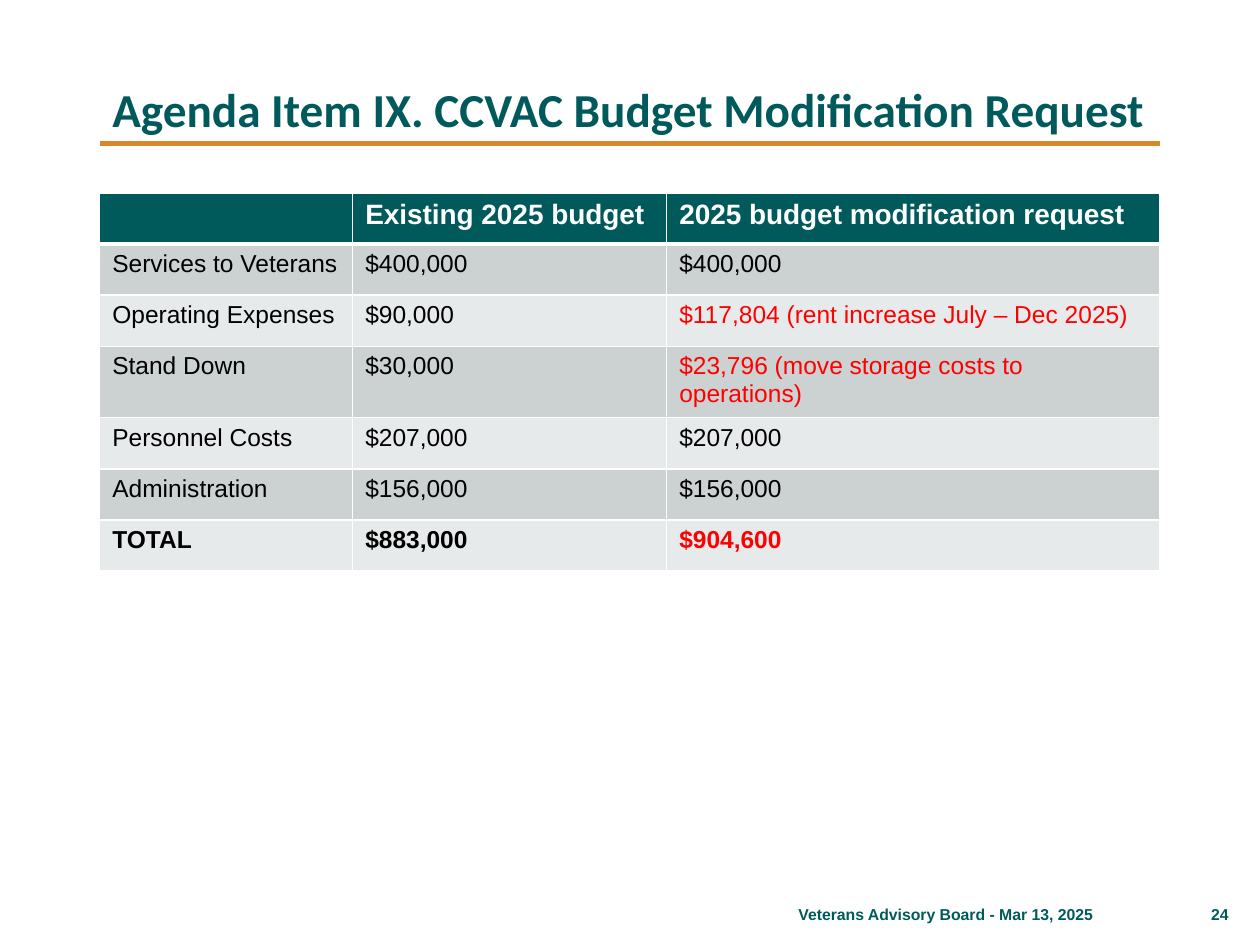
from lxml import etree
from pptx import Presentation
from pptx.dml.color import RGBColor
from pptx.enum.shapes import MSO_CONNECTOR
from pptx.enum.text import MSO_ANCHOR, MSO_AUTO_SIZE, PP_ALIGN
from pptx.oxml.ns import qn
from pptx.util import Cm, Pt

STRAIGHT = MSO_CONNECTOR.STRAIGHT
BOTTOM, MIDDLE = MSO_ANCHOR.BOTTOM, MSO_ANCHOR.MIDDLE
NO_AUTOFIT = MSO_AUTO_SIZE.NONE
LEFT, RIGHT = PP_ALIGN.LEFT, PP_ALIGN.RIGHT
TITLE_ONLY = 5

TEAL, FOOTER_TEAL, ORANGE = "00595B", "005A5B", "D8872A"
WHITE, BLACK, RED = "FFFFFF", "000000", "FF0000"
BANDS = ("CCD1D2", "E7EAEA")

MARGIN, CONTENT_WIDTH = Cm(2.01), Cm(21.38)
RULE_TOP = Cm(2.9)
FOOTER_TOP, FOOTER_HEIGHT = Cm(17.93), Cm(1.02)

COLUMN_WIDTHS = (Cm(5.1), Cm(6.33), Cm(9.95))
ROW_HEIGHT = Cm(1.03)
BUDGET = (
    ("", "Existing 2025 budget", "2025 budget modification request"),
    ("Services to Veterans", "$400,000", "$400,000"),
    ("Operating Expenses", "$90,000", "$117,804 (rent increase July – Dec 2025)"),
    ("Stand Down", "$30,000", "$23,796 (move storage costs to operations)"),
    ("Personnel Costs", "$207,000", "$207,000"),
    ("Administration", "$156,000", "$156,000"),
    ("TOTAL", "$883,000", "$904,600"),
)


def rgb(color):
    return RGBColor.from_string(color)


class SlideBuilder:
    def __init__(self, slide, font="Arial"):
        self.slide = slide
        self.font = font

    def add_run(self, paragraph, text, size, color, bold=False, font=None):
        run = paragraph.add_run()
        run.text = text
        run.font.name = font or self.font
        run.font.size = Pt(size)
        run.font.bold = bold
        run.font.color.rgb = rgb(color)

    def title(self, text, top, height):
        shape = self.slide.shapes.title
        shape.left, shape.top = MARGIN, top
        shape.width, shape.height = CONTENT_WIDTH, height
        frame = shape.text_frame
        frame.word_wrap = True
        frame.auto_size = NO_AUTOFIT
        frame.vertical_anchor = BOTTOM
        paragraph = frame.paragraphs[0]
        paragraph.alignment = LEFT
        paragraph.line_spacing = 0.9
        self.add_run(paragraph, text, 27, TEAL, True, "Calibri")

    def rule(self, top):
        line = self.slide.shapes.add_connector(
            STRAIGHT, MARGIN, top, MARGIN + CONTENT_WIDTH, top)
        line.line.color.rgb = rgb(ORANGE)
        line.line.width = Pt(3)
        etree.SubElement(line._element.spPr, qn("a:effectLst"))

    def footer(self, text, left, width):
        box = self.slide.shapes.add_textbox(left, FOOTER_TOP, width, FOOTER_HEIGHT)
        frame = box.text_frame
        frame.word_wrap = True
        frame.vertical_anchor = MIDDLE
        paragraph = frame.paragraphs[0]
        paragraph.alignment = RIGHT
        self.add_run(paragraph, text, 9, FOOTER_TEAL, True)

    def cell_borders(self, cell, widths):
        """Draw white borders; widths maps a side (L, R, T, B) to points."""
        properties = cell._tc.get_or_add_tcPr()
        for side, width in widths.items():
            line = etree.SubElement(properties, qn(f"a:ln{side}"), w=str(Pt(width)))
            fill = etree.SubElement(line, qn("a:solidFill"))
            etree.SubElement(fill, qn("a:srgbClr"), val=WHITE)

    def budget_table(self, rows, top):
        """Build the table; amounts that differ from the existing budget are red."""
        table = self.slide.shapes.add_table(
            len(rows), len(COLUMN_WIDTHS), MARGIN, top,
            CONTENT_WIDTH, ROW_HEIGHT * len(rows)).table
        for column, width in zip(table.columns, COLUMN_WIDTHS):
            column.width = width
        last = len(rows) - 1
        for row_index, row in enumerate(rows):
            table.rows[row_index].height = ROW_HEIGHT
            header = row_index == 0
            for column_index, text in enumerate(row):
                cell = table.cell(row_index, column_index)
                self.cell_borders(cell, {
                    "L": 1, "R": 1,
                    "T": 3 if row_index == 1 else 1,
                    "B": 3 if header else 1})
                cell.fill.solid()
                cell.fill.fore_color.rgb = rgb(
                    TEAL if header else BANDS[(row_index - 1) % 2])
                if not text:
                    continue
                changed = column_index == 2 and text != row[1]
                color = WHITE if header else RED if changed else BLACK
                self.add_run(cell.text_frame.paragraphs[0], text,
                             16 if header else 14, color,
                             row_index in (0, last))


def main():
    presentation = Presentation()
    presentation.slide_width, presentation.slide_height = Cm(25.4), Cm(19.05)
    slide = presentation.slides.add_slide(presentation.slide_layouts[TITLE_ONLY])
    builder = SlideBuilder(slide)
    builder.rule(RULE_TOP)
    builder.title("Agenda Item IX. CCVAC Budget Modification Request",
                  Cm(1.02), Cm(1.88))
    builder.footer("Veterans Advisory Board - Mar 13, 2025", Cm(6.35), Cm(15.93))
    builder.footer("24", Cm(23.83), Cm(1.19))
    builder.budget_table(BUDGET, Cm(3.89))
    presentation.save("out.pptx")


if __name__ == "__main__":
    main()
